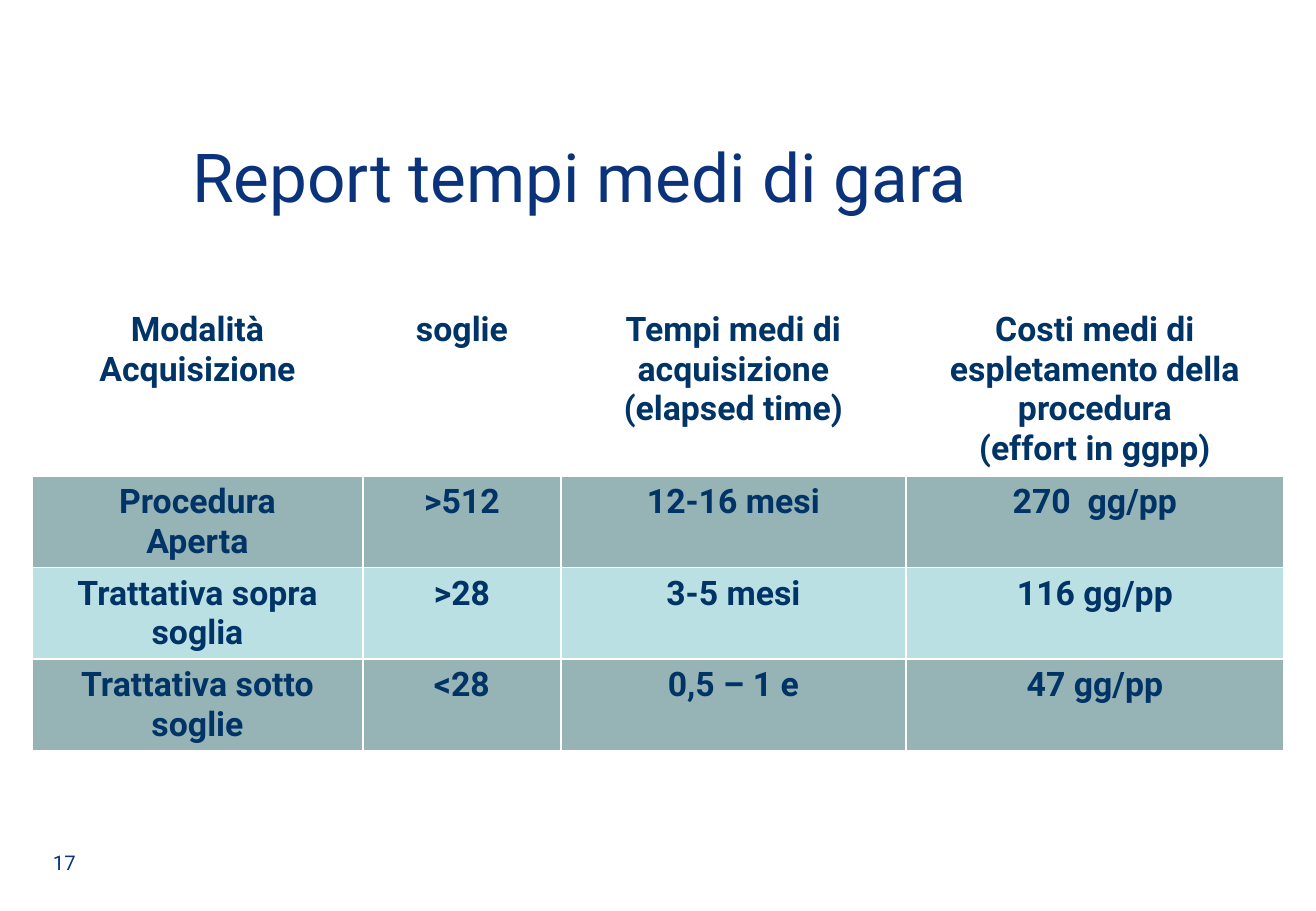
from lxml.etree import SubElement
from pptx import Presentation
from pptx.dml.color import RGBColor
from pptx.enum.text import MSO_ANCHOR, MSO_AUTO_SIZE, PP_ALIGN
from pptx.oxml.ns import qn
from pptx.util import Pt

PX = 7526  # EMU per px


def color(value):
    return RGBColor.from_string(value)


def write(frame, text, size, ink, bold=False, align=PP_ALIGN.LEFT):
    frame.word_wrap = True
    paragraph = frame.paragraphs[0]
    paragraph.text = text
    paragraph.alignment = align
    for run in paragraph.runs:
        run.font.name = "Roboto"
        run.font.size = Pt(size)
        run.font.bold = bold
        run.font.color.rgb = color(ink)


presentation = Presentation()
presentation.slide_width = 1316 * PX
presentation.slide_height = 911 * PX
slide = presentation.slides.add_slide(presentation.slide_layouts[5])

# Title
title = slide.shapes.title
title.left, title.top, title.width, title.height = [n * PX for n in (192, 134, 1073, 82)]
heading = title.text_frame
heading.auto_size = MSO_AUTO_SIZE.NONE
heading.vertical_anchor = MSO_ANCHOR.BOTTOM
heading.margin_left = heading.margin_right = heading.margin_top = heading.margin_bottom = 0
write(heading, "Report tempi medi di gara", 40, "0B337B")

# Tender times table
report = [
    ["Modalità\nAcquisizione", "soglie", "Tempi medi di acquisizione (elapsed time)",
     "Costi medi di espletamento della procedura\n(effort in ggpp)"],
    ["Procedura\nAperta", ">512", "12-16 mesi", "270  gg/pp"],
    ["Trattativa sopra soglia", ">28", "3-5 mesi", "116 gg/pp"],
    ["Trattativa sotto soglie", "<28", "0,5 – 1 e", "47 gg/pp"],
]
row_fills = ["FFFFFF", "96B3B6", "BBE0E3", "96B3B6"]
row_heights = [172, 91, 91, 91]
column_widths = [331, 198, 345, 378]

times = slide.shapes.add_table(
    len(report), len(column_widths), 32 * PX, 304 * PX,
    sum(column_widths) * PX, sum(row_heights) * PX).table
times.first_row = times.horz_banding = False
for column, width in zip(times.columns, column_widths):
    column.width = width * PX
for row, height, fill, entries in zip(times.rows, row_heights, row_fills, report):
    row.height = height * PX
    for cell, entry in zip(row.cells, entries):
        cell.fill.solid()
        cell.fill.fore_color.rgb = color(fill)
        write(cell.text_frame, entry, 20, "003366", bold=True, align=PP_ALIGN.CENTER)

# White rule under the header row
for cell in times.rows[0].cells:
    properties = cell._tc.get_or_add_tcPr()
    rule = SubElement(properties, qn("a:lnB"), w=str(Pt(2)))
    SubElement(SubElement(rule, qn("a:solidFill")), qn("a:srgbClr"), val="FFFFFF")
    properties.insert(0, rule)

# Page number
page_number = slide.shapes.add_textbox(41 * PX, 844 * PX, 81 * PX, 40 * PX)
write(page_number.text_frame, "17", 12, "0B337B")

presentation.save("out.pptx")
